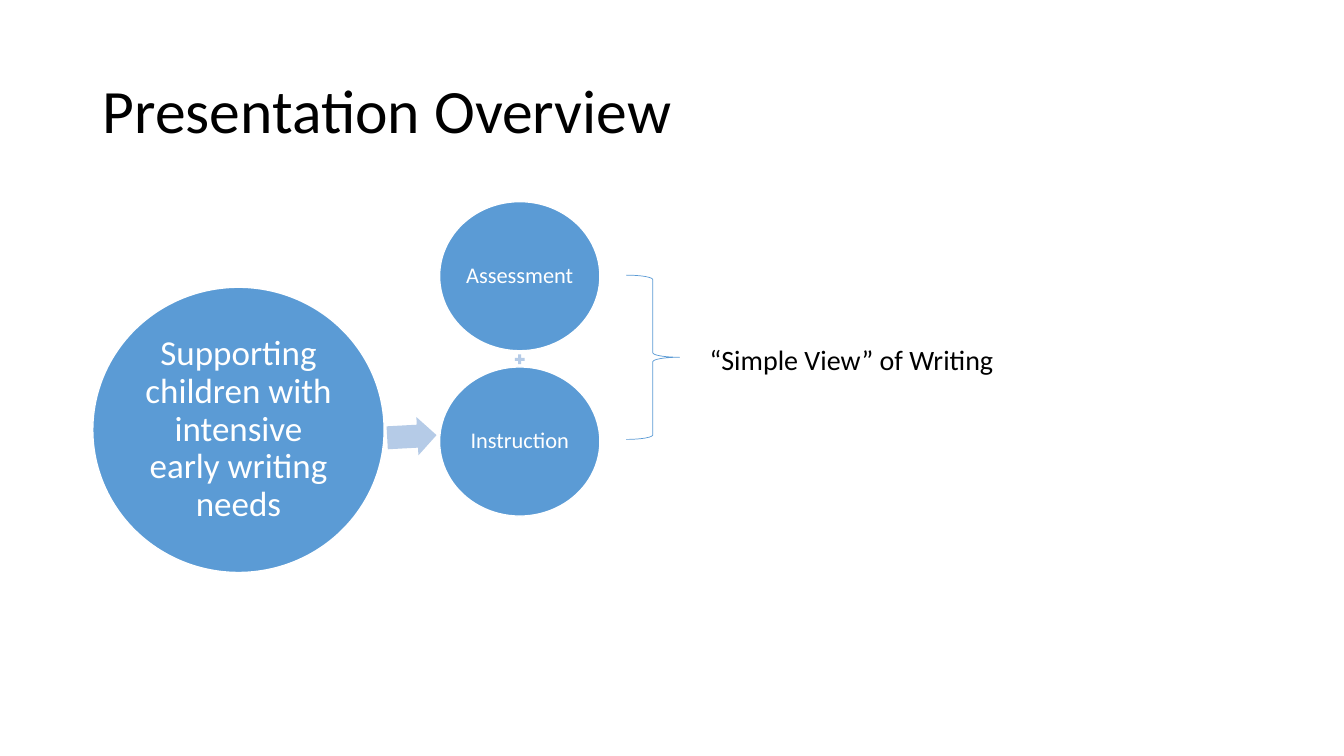
from pptx import Presentation, util as u
from pptx.dml.color import RGBColor
from pptx.enum import shapes, text

PX = 9144  # EMU per px, 100 px to the inch
SLIDE = (1333, 750)
FONT = "Calibri"
COLORS = {"ink": "000000", "paper": "FFFFFF", "circle": "5B9BD5", "link": "B5CBE7"}

TITLE = ("Presentation Overview", (92, 40, 1150, 145), 44)
FRAMEWORK = ("“Simple View” of Writing", (694, 335, 314, 77), 20)
GOAL = ("Supporting children with intensive early writing needs", (92, 285, 289, 283), 25, 3)

PARTS = ["Assessment", "Instruction"]
PART_LEFT, PART_TOP, PART_WIDTH, PART_HEIGHT = 436, 200, 159, 148
PART_STEP = 164
PLUS_SIZE = 13
ARROW = (384, 414, 49, 38)
ARROW_TILT = -3.1
BRACE = (621, 273, 53, 163)

KINDS = shapes.MSO_SHAPE


def color(name):
    return RGBColor.from_string(COLORS[name])


def emu(box):
    return [u.Emu(length * PX) for length in box]


def write(shape, words, size, ink, anchor, align, spacing):
    frame = shape.text_frame
    frame.word_wrap = True
    frame.vertical_anchor = anchor
    frame.text = words
    paragraph = frame.paragraphs[0]
    paragraph.alignment = align
    paragraph.line_spacing = spacing
    paragraph.font.name = FONT
    paragraph.font.size = u.Pt(size)
    paragraph.font.color.rgb = color(ink)


def add_label(slide, words, box, size, anchor, spacing):
    label = slide.shapes.add_textbox(*emu(box))
    write(label, words, size, "ink", anchor, text.PP_ALIGN.LEFT, spacing)


def add_figure(slide, kind, box, fill=None, line=None, weight=1):
    figure = slide.shapes.add_shape(kind, *emu(box))
    figure.shadow.inherit = False
    if fill:
        figure.fill.solid()
        figure.fill.fore_color.rgb = color(fill)
    else:
        figure.fill.background()
    if line:
        figure.line.color.rgb = color(line)
        figure.line.width = u.Pt(weight)
    else:
        figure.line.fill.background()
    return figure


def add_circle(slide, words, box, size, inset):
    circle = add_figure(slide, KINDS.OVAL, box, "circle", "paper")
    frame = circle.text_frame
    frame.margin_left = frame.margin_right = u.Emu(inset * PX)
    frame.margin_top = frame.margin_bottom = u.Emu(inset * PX)
    write(circle, words, size, "paper", text.MSO_ANCHOR.MIDDLE, text.PP_ALIGN.CENTER, 0.9)


def main():
    deck = Presentation()
    deck.slide_width, deck.slide_height = emu(SLIDE)
    slide = deck.slides.add_slide(deck.slide_layouts[6])

    add_label(slide, *TITLE, text.MSO_ANCHOR.MIDDLE, 0.9)

    plus_left = PART_LEFT + (PART_WIDTH - PLUS_SIZE) // 2
    plus_rise = (PART_STEP - PART_HEIGHT + PLUS_SIZE) // 2
    for index, part in enumerate(PARTS):
        top = PART_TOP + index * PART_STEP
        add_circle(slide, part, (PART_LEFT, top, PART_WIDTH, PART_HEIGHT), 16, 2)
        if index:
            add_figure(slide, KINDS.MATH_PLUS,
                       (plus_left, top - plus_rise, PLUS_SIZE, PLUS_SIZE), "link")

    arrow = add_figure(slide, KINDS.RIGHT_ARROW, ARROW, "link")
    arrow.adjustments[0] = 0.6
    arrow.adjustments[1] = 0.5
    arrow.rotation = ARROW_TILT
    add_circle(slide, *GOAL)

    add_figure(slide, KINDS.RIGHT_BRACE, BRACE, line="circle", weight=0.5)
    add_label(slide, *FRAMEWORK, text.MSO_ANCHOR.TOP, 1.0)

    deck.save("out.pptx")


if __name__ == "__main__":
    main()
